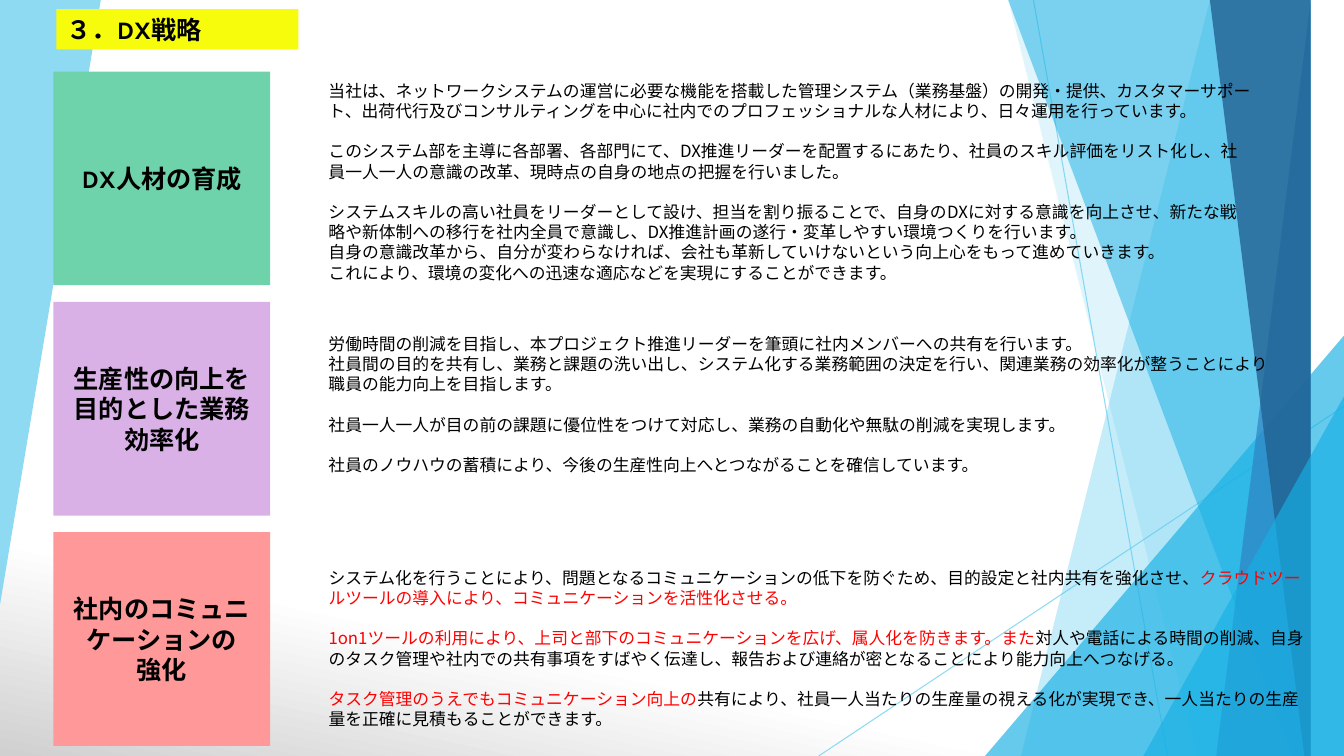
from dataclasses import dataclass

from lxml.etree import SubElement
from pptx import Presentation
from pptx.dml.color import RGBColor as Rgb
from pptx.enum.shapes import MSO_CONNECTOR as Link, MSO_SHAPE as Kind
from pptx.enum.text import MSO_ANCHOR as Anchor, PP_ALIGN as Align
from pptx.oxml.ns import qn
from pptx.util import Inches, Pt

INK = {"black": "000000", "red": "FF0000", "yellow": "F6FC0C",
       "green": "6ED2AA", "mauve": "DAB1E7", "pink": "FF9999",
       "white": "FFFFFF", "grey": "D0D0D0", "sky": "5FCBEF",
       "cyan": "17B0E4", "blue": "2E83C3", "navy": "226292"}
CJK = "Noto Sans CJK JP"
WIDE, HIGH = 13.33, 7.5


@dataclass
class Facet:
    """A tinted polygon; a triangle is a preset with its tip at the right."""
    pts: list
    ink: str
    pct: int
    tri: bool = False


@dataclass
class Topic:
    """A coloured card and its body text: groups of paragraphs of runs."""
    name: str
    ink: str
    face: str
    top: float
    wide: float
    high: float
    body: list


def band(head: float, foot: float, ink: str, pct: int) -> Facet:
    """A facet that reaches the right edge of the slide."""
    return Facet([(head, 0), (WIDE, 0), (WIDE, HIGH), (foot, HIGH)], ink, pct)


def peak(left: float, top: float) -> Facet:
    """A triangle in the bottom right corner."""
    return Facet([(left, top), (WIDE, HIGH)], "cyan", 66, True)


FACETS = [
    Facet([(0, 0), (0.94, 0), (0, 6.22)], "sky", 70),
    band(12.28, 10.04, "sky", 36),
    band(10.5, 11.83, "sky", 20),
    peak(9.77, 3.33),
    band(10.21, 12.91, "cyan", 50),
    band(13.03, 11.92, "blue", 70),
    band(11.96, 13.18, "navy", 80),
    peak(11.34, 3.93),
]
RAYS = [(10.25, 0, 11.58, HIGH), (WIDE, 4.03, 8.12, HIGH)]

TOPICS = [
    Topic("DX人材の育成", "green", "Karla", 0.75, 9.37, 2.12, [
        [[("当社は、ネットワークシステムの運営に必要な機能を搭載した管理システム（業務基盤）の開発・提供、カスタマーサポート、出荷代行及びコンサルティングを中心に社内でのプロフェッショナルな人材により、日々運用を行っています。", "black")]],
        [[("このシステム部を主導に各部署、各部門にて、DX推進リーダーを配置するにあたり、社員のスキル評価をリスト化し、社員一人一人の意識の改革、現時点の自身の地点の把握を行いました。", "black")]],
        [[("システムスキルの高い社員をリーダーとして設け、担当を割り振ることで、自身のDXに対する意識を向上させ、新たな戦略や新体制への移行を社内全員で意識し、DX推進計画の遂行・変革しやすい環境つくりを行います。", "black")],
         [("自身の意識改革から、自分が変わらなければ、会社も革新していけないという向上心をもって進めていきます。", "black")],
         [("これにより、環境の変化への迅速な適応などを実現にすることができます。", "black")]],
    ]),
    Topic("生産性の向上を目的とした業務効率化", "mauve", CJK, 3.26, 9.64, 1.51, [
        [[("労働時間の削減を目指し、本プロジェクト推進リーダーを筆頭に社内メンバーへの共有を行います。", "black")],
         [("社員間の目的を共有し、業務と課題の洗い出し、システム化する業務範囲の決定を行い、関連業務の効率化が整うことにより職員の能力向上を目指します。", "black")]],
        [[("社員一人一人が目の前の課題に優位性をつけて対応し、業務の自動化や無駄の削減を実現します。", "black")]],
        [[("社員のノウハウの蓄積により、今後の生産性向上へとつながることを確信しています。", "black")]],
    ]),
    Topic("社内のコミュニケーションの\n強化", "pink", CJK, 5.58, 9.91, 1.72, [
        [[("システム化を行うことにより、問題となるコミュニケーションの低下を防ぐため、目的設定と社内共有を強化させ、", "black"),
          ("クラウドツールツールの導入により、コミュニケーションを活性化させる。", "red")]],
        [[("1on1ツールの利用により、上司と部下のコミュニケーションを広げ、属人化を防きます。また", "red"),
          ("対人や電話による時間の削減、自身のタスク管理や社内での共有事項をすばやく伝達し、報告および連絡が密となることにより能力向上へつなげる。", "black")]],
        [[("タスク管理のうえでもコミュニケーション向上の", "red"),
          ("共有により、社員一人当たりの生産量の視える化が実現でき、一人当たりの生産量を正確に見積もることができます。", "black")]],
    ]),
]


def tint(color, ink: str) -> None:
    color.rgb = Rgb.from_string(INK[ink])


def fade(fill, pct: int) -> None:
    """Set the opacity of a solid fill."""
    node = fill.fore_color._xFill.find(qn("a:srgbClr"))
    SubElement(node, qn("a:alpha")).set("val", str(pct * 1000))


def paint(shape, ink: str) -> None:
    """Give a shape a flat fill with no line."""
    shape.fill.solid()
    tint(shape.fill.fore_color, ink)
    shape.line.fill.background()


def style(run, size: int, ink: str, face: str, bold: bool) -> None:
    font = run.font
    font.size, font.name, font.bold = Pt(size), face, bold
    tint(font.color, ink)
    latin = font._element.find(qn("a:latin"))
    asian = latin.makeelement(qn("a:ea"), {"typeface": CJK})
    latin.addnext(asian)


def label(shape, text: str, face: str, align, anchor) -> None:
    """Write a bold heading in a shape."""
    frame = shape.text_frame
    frame.text, frame.word_wrap = text, True
    frame.vertical_anchor = anchor
    for para in frame.paragraphs:
        para.alignment = align
        style(para.runs[0], 18, "black", face, True)


def draw_facet(shapes, facet: Facet) -> None:
    if facet.tri:
        (left, top), (right, foot) = facet.pts
        shape = shapes.add_shape(Kind.ISOSCELES_TRIANGLE, Inches(left), Inches(top),
                                 Inches(right - left), Inches(foot - top))
        shape.adjustments[0] = 1
    else:
        pen = shapes.build_freeform(*facet.pts[0], scale=Inches(1))
        pen.add_line_segments(facet.pts[1:], close=True)
        shape = pen.convert_to_shape()
    shape.shadow.inherit = False
    paint(shape, facet.ink)
    fade(shape.fill, facet.pct)


def draw_ray(shapes, ends: tuple) -> None:
    ray = shapes.add_connector(Link.STRAIGHT, *map(Inches, ends))
    ray.line.width = Pt(0.75)
    tint(ray.line.color, "sky")
    fade(ray.line.fill, 70)
    SubElement(ray._element.spPr, qn("a:effectLst"))


def draw_topic(shapes, topic: Topic, row: int) -> None:
    # Card
    card = shapes.add_shape(Kind.RECTANGLE, Inches(0.53), Inches(0.71 + 2.285 * row),
                            Inches(2.15), Inches(2.12))
    card.shadow.inherit = False
    paint(card, topic.ink)
    label(card, topic.name, topic.face, Align.CENTER, Anchor.MIDDLE)

    # Body text
    box = shapes.add_textbox(Inches(3.16), Inches(topic.top),
                             Inches(topic.wide), Inches(topic.high))
    frame = box.text_frame
    frame.word_wrap = True
    para = None
    for group in topic.body:
        for spot, runs in enumerate(group):
            gap = para is not None and spot == 0
            para = frame.add_paragraph() if para is not None else frame.paragraphs[0]
            if gap:
                para.space_before = Pt(14.5)
            for text, ink in runs:
                run = para.add_run()
                run.text = text
                style(run, 12, ink, CJK, False)


def main() -> None:
    deck = Presentation()
    deck.slide_width, deck.slide_height = Inches(WIDE), Inches(HIGH)
    slide = deck.slides.add_slide(deck.slide_layouts[5])
    shapes = slide.shapes

    # Background
    fill = slide.background.fill
    fill.gradient()
    fill.gradient_angle = 258
    for stop, ink, at in zip(fill.gradient_stops, ("white", "grey"), (0.79, 1)):
        tint(stop.color, ink)
        stop.position = at

    # Backdrop
    draw_facet(shapes, FACETS[0])
    for ends in RAYS:
        draw_ray(shapes, ends)
    for facet in FACETS[1:]:
        draw_facet(shapes, facet)

    # Title, brought in front of the backdrop
    title = shapes.title
    title.left, title.top = Inches(0.56), Inches(0.09)
    title.width, title.height = Inches(2.4), Inches(0.4)
    paint(title, "yellow")
    label(title, "３．DX戦略", "Karla", Align.LEFT, Anchor.TOP)
    shapes._spTree.append(title._element)

    # Topics
    for row, topic in enumerate(TOPICS):
        draw_topic(shapes, topic, row)

    deck.save("out.pptx")


if __name__ == "__main__":
    main()
